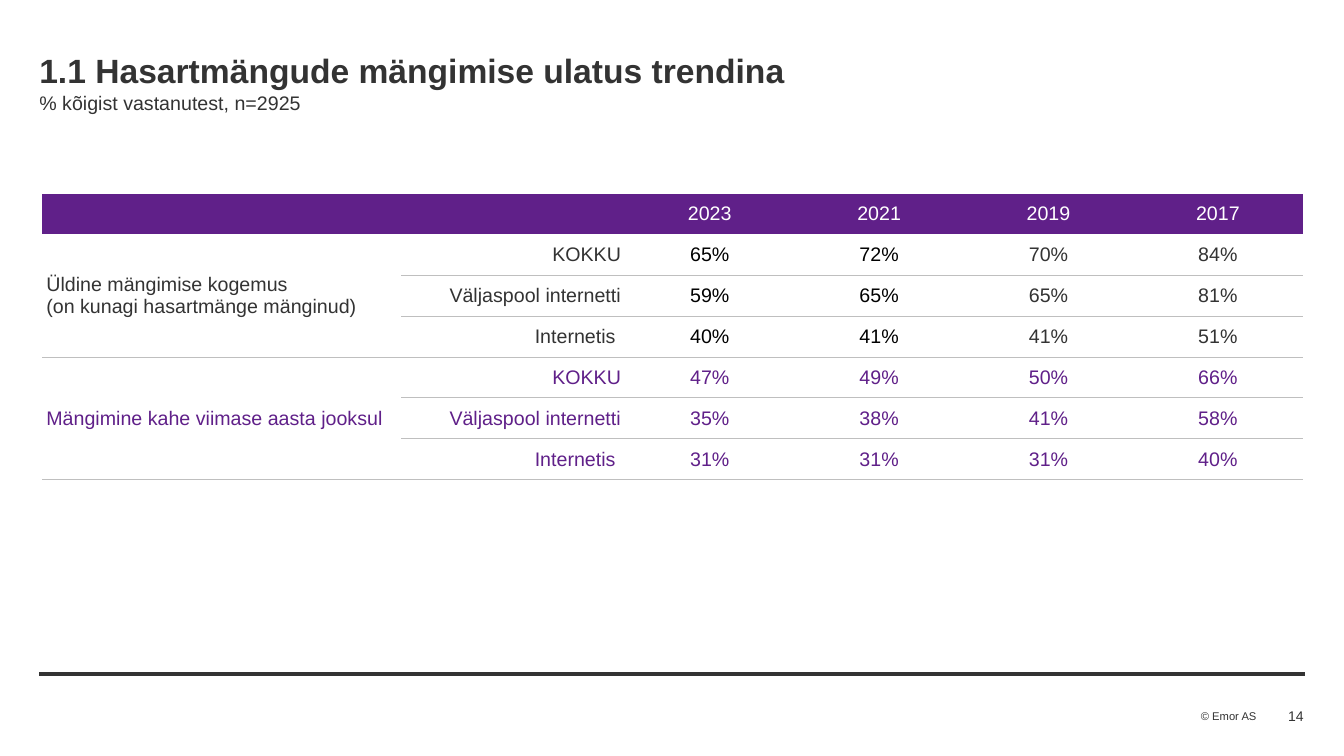
from lxml.etree import SubElement
from pptx import Presentation
from pptx.dml.color import RGBColor
from pptx.enum.shapes import MSO_CONNECTOR
from pptx.enum.text import MSO_ANCHOR, PP_ALIGN
from pptx.oxml.ns import qn
from pptx.util import Inches, Pt

DARK, PURPLE, BLACK, WHITE, GREY = "333333", "602089", "000000", "FFFFFF", "BFBFBF"
FONT = "Arial"
PLAIN_TABLE_STYLE = "{2D5ABB26-0587-4C30-8999-92F81FD0307C}"

TITLE = "1.1 Hasartmängude mängimise ulatus trendina"
SUBTITLE = "% kõigist vastanutest, n=2925"
COPYRIGHT = "© Emor AS"
PAGE_NUMBER = "14"

YEARS = ["2023", "2021", "2019", "2017"]
# group label, label colour, colour of each year, rows of (place, percentages)
GROUPS = [
    ("Üldine mängimise kogemus\n(on kunagi hasartmänge mänginud)",
     DARK, [BLACK, BLACK, DARK, DARK],
     [("KOKKU", [65, 72, 70, 84]),
      ("Väljaspool internetti", [59, 65, 65, 81]),
      ("Internetis ", [40, 41, 41, 51])]),
    ("Mängimine kahe viimase aasta jooksul",
     PURPLE, [PURPLE] * 4,
     [("KOKKU", [47, 49, 50, 66]),
      ("Väljaspool internetti", [35, 38, 41, 58]),
      ("Internetis ", [31, 31, 31, 40])]),
]
COLUMN_WIDTHS = [3.56, 2.22] + [1.68] * len(YEARS)
TABLE_LEFT, TABLE_TOP, TABLE_HEIGHT = 0.42, 1.92, 2.84
CELL_MARGIN = 0.04


def rgb(hex_color):
    return RGBColor.from_string(hex_color)


def style_font(font, size, color, bold=False):
    for name, value in {"name": FONT, "size": Pt(size), "bold": bold}.items():
        setattr(font, name, value)
    font.color.rgb = rgb(color)


def add_text(slide, box, runs, wrap=True, align=PP_ALIGN.LEFT, anchor=MSO_ANCHOR.TOP):
    """Add a one-paragraph box; runs are (text, size, bold), one per line."""
    frame = slide.shapes.add_textbox(*map(Inches, box)).text_frame
    settings = {"margin_left": 0, "margin_top": 0, "margin_right": 0,
                "margin_bottom": 0, "word_wrap": wrap, "vertical_anchor": anchor}
    for name, value in settings.items():
        setattr(frame, name, value)
    paragraph = frame.paragraphs[0]
    paragraph.alignment = align
    for index, (text, size, bold) in enumerate(runs):
        if index:
            paragraph.add_line_break()
        run = paragraph.add_run()
        run.text = text
        style_font(run.font, size, DARK, bold)


def add_bottom_border(cell):
    border = SubElement(cell._tc.get_or_add_tcPr(), qn("a:lnB"), w=str(Pt(0.75)))
    fill = SubElement(border, qn("a:solidFill"))
    SubElement(fill, qn("a:srgbClr"), val=GREY)


def fill_cell(cell, text, color, align):
    settings = {"vertical_anchor": MSO_ANCHOR.MIDDLE}
    for side in ("left", "top", "right", "bottom"):
        settings[f"margin_{side}"] = Inches(CELL_MARGIN)
    for name, value in settings.items():
        setattr(cell, name, value)
    paragraph = cell.text_frame.paragraphs[0]
    paragraph.text = text
    paragraph.alignment = align
    style_font(paragraph.font, 14, color)
    for run in paragraph.runs:
        style_font(run.font, 14, color)


def add_trend_table(slide):
    row_count = 1 + sum(len(rows) for *_, rows in GROUPS)
    table = slide.shapes.add_table(
        row_count, len(COLUMN_WIDTHS), Inches(TABLE_LEFT), Inches(TABLE_TOP),
        Inches(sum(COLUMN_WIDTHS)), Inches(TABLE_HEIGHT)).table
    table.first_row = table.horz_banding = False
    table._tbl.tblPr.find(qn("a:tableStyleId")).text = PLAIN_TABLE_STYLE
    for column, width in zip(table.columns, COLUMN_WIDTHS):
        column.width = Inches(width)

    for column, heading in enumerate(["", ""] + YEARS):
        cell = table.cell(0, column)
        fill_cell(cell, heading, WHITE, PP_ALIGN.CENTER)
        cell.fill.solid()
        cell.fill.fore_color.rgb = rgb(PURPLE)

    first = 1
    for label, label_color, year_colors, rows in GROUPS:
        last = first + len(rows) - 1
        label_cell = table.cell(first, 0)
        label_cell.merge(table.cell(last, 0))
        fill_cell(label_cell, label, label_color, PP_ALIGN.LEFT)
        for row, (place, shares) in enumerate(rows, first):
            fill_cell(table.cell(row, 1), place, label_color, PP_ALIGN.RIGHT)
            for column, (share, color) in enumerate(zip(shares, year_colors), 2):
                fill_cell(table.cell(row, column), f"{share}%", color, PP_ALIGN.CENTER)
            for column in range(len(COLUMN_WIDTHS)):
                cell = table.cell(row, column)
                if column or row in (first, last):
                    add_bottom_border(cell)
                cell.fill.background()
        first = last + 1


def add_footer(slide):
    rule = slide.shapes.add_connector(
        MSO_CONNECTOR.STRAIGHT, *map(Inches, (0.39, 6.69, 12.94, 6.69)))
    rule.line.color.rgb = rgb(DARK)
    rule.line.width = Pt(3)
    SubElement(rule._element.spPr, qn("a:effectLst"))
    add_text(slide, (11.91, 7.04, 0.56, 0.13), [(COPYRIGHT, 8, False)], wrap=False)
    add_text(slide, (11.87, 6.99, 1.06, 0.22), [(PAGE_NUMBER, 10, False)],
             align=PP_ALIGN.RIGHT, anchor=MSO_ANCHOR.MIDDLE)


def main():
    presentation = Presentation()
    presentation.slide_width = Inches(13.33)
    presentation.slide_height = Inches(7.5)
    slide = presentation.slides.add_slide(presentation.slide_layouts[6])
    add_text(slide, (0.39, 0.5, 12.54, 0.44), [(TITLE, 24, True), (SUBTITLE, 14, False)])
    add_trend_table(slide)
    add_footer(slide)
    presentation.save("out.pptx")


if __name__ == "__main__":
    main()
